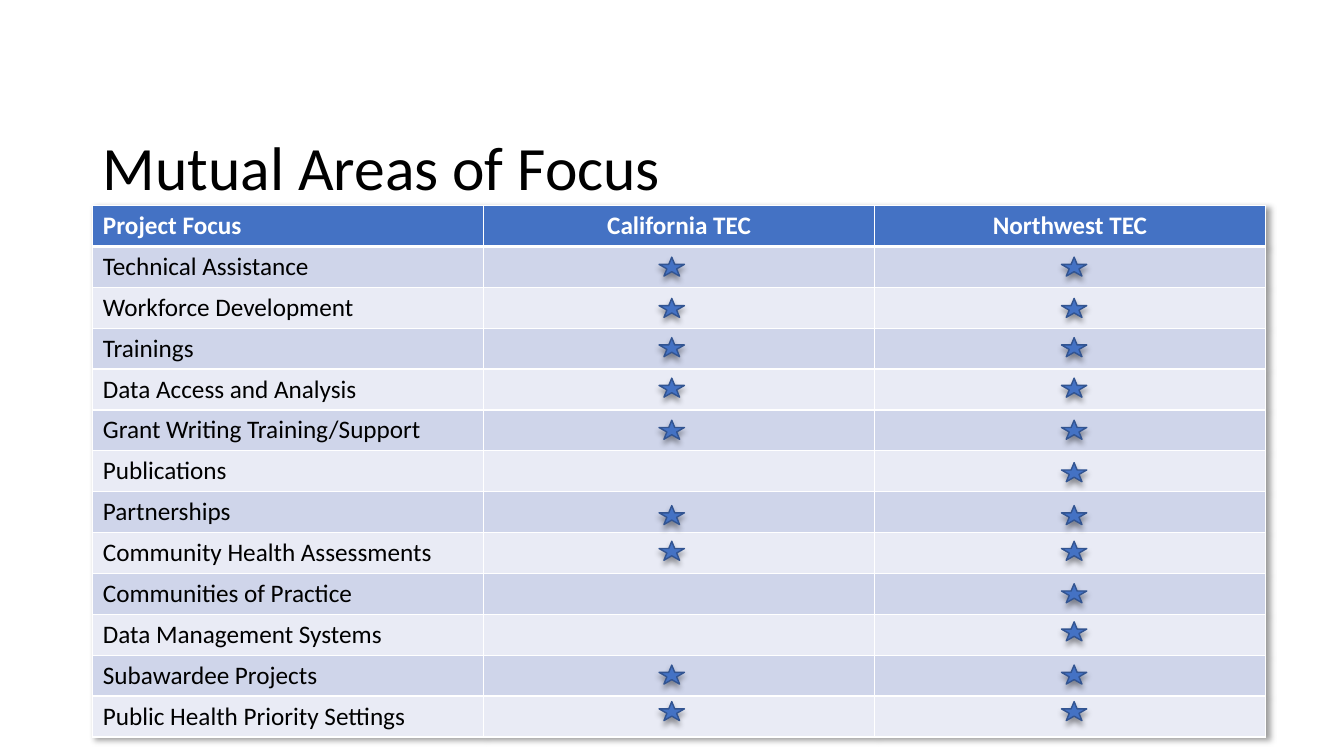
from pptx import Presentation
from pptx.dml.color import RGBColor
from pptx.enum.shapes import MSO_SHAPE
from pptx.enum.text import MSO_ANCHOR, PP_ALIGN
from pptx.oxml import parse_xml
from pptx.oxml.ns import nsdecls, qn
from pptx.util import Cm, Pt

THEME = {
    "font": "Calibri",
    "title_size": Pt(44),
    "table_size": Pt(18),
    "text": RGBColor.from_string("000000"),
    "white": RGBColor.from_string("FFFFFF"),
    "accent": RGBColor.from_string("4472C4"),
    "star_line": RGBColor.from_string("325491"),
    "bands": [RGBColor.from_string("CFD5EA"), RGBColor.from_string("E9EBF5")],
}

HEADINGS = ["Project Focus", "California TEC", "Northwest TEC"]
STAR_LEFTS = {"California": 16.61, "Northwest": 26.75}
BOTH = ["California", "Northwest"]
NORTHWEST = ["Northwest"]
# Focus area, centres that share it, top of its stars in cm
FOCUS_AREAS = [
    ("Technical Assistance", BOTH, 6.48),
    ("Workforce Development", BOTH, 7.52),
    ("Trainings", BOTH, 8.51),
    ("Data Access and Analysis", BOTH, 9.53),
    ("Grant Writing Training/Support", BOTH, 10.59),
    ("Publications", NORTHWEST, 11.66),
    ("Partnerships", BOTH, 12.74),
    ("Community Health Assessments", BOTH, 13.64),
    ("Communities of Practice", NORTHWEST, 14.71),
    ("Data Management Systems", NORTHWEST, 15.67),
    ("Subawardee Projects", BOTH, 16.76),
    ("Public Health Priority Settings", BOTH, 17.68),
]


def write(frame, text, **font_format):
    para = frame.paragraphs[0]
    span = para.add_run()
    span.text = text
    for name, value in {"name": THEME["font"], **font_format}.items():
        if name == "color":
            span.font.color.rgb = value
        else:
            setattr(span.font, name, value)
    return para


def outer_shadow(angle):
    """Return a soft 40 % black shadow cast at the given angle in degrees."""
    return parse_xml(
        f'<a:outerShdw {nsdecls("a")} blurRad="{Pt(4)}" dist="{Pt(3)}" '
        f'dir="{angle * 60000}" algn="ctr" rotWithShape="0">'
        '<a:srgbClr val="000000"><a:alpha val="40000"/></a:srgbClr></a:outerShdw>'
    )


deck = Presentation()
deck.slide_width, deck.slide_height = Cm(33.87), Cm(19.05)
page = deck.slides.add_slide(deck.slide_layouts[6])

# Table
rows = [HEADINGS] + [[name, "", ""] for name, _, _ in FOCUS_AREAS]
table = page.shapes.add_table(
    len(rows), len(HEADINGS), Cm(2.34), Cm(5.18), Cm(29.55), Cm(13.39)
).table
table_effects = parse_xml(f'<a:effectLst {nsdecls("a")}/>')
table_effects.append(outer_shadow(45))
table._tbl.tblPr.insert(0, table_effects)
for column in table.columns:
    column.width = Cm(9.85)

for row_index, texts in enumerate(rows):
    is_heading = row_index == 0
    table.rows[row_index].height = Cm(1.03)
    for column_index, text in enumerate(texts):
        cell = table.cell(row_index, column_index)
        widths = {
            "lnL": 1,
            "lnR": 1,
            "lnT": 3 if row_index == 1 else 1,
            "lnB": 3 if is_heading else 1,
        }
        for side, width in widths.items():
            cell._tc.get_or_add_tcPr().append(parse_xml(
                f'<a:{side} {nsdecls("a")} w="{Pt(width)}"><a:solidFill>'
                f'<a:srgbClr val="{THEME["white"]}"/></a:solidFill></a:{side}>'
            ))
        cell.fill.solid()
        cell.fill.fore_color.rgb = (
            THEME["accent"] if is_heading else THEME["bands"][(row_index - 1) % 2]
        )
        if text:
            para = write(
                cell.text_frame, text, size=THEME["table_size"], bold=is_heading,
                color=THEME["white"] if is_heading else THEME["text"],
            )
            para.alignment = PP_ALIGN.CENTER if column_index else PP_ALIGN.LEFT

# Stars
for _, centres, top in FOCUS_AREAS:
    for centre in centres:
        star = page.shapes.add_shape(
            MSO_SHAPE.STAR_5_POINT, Cm(STAR_LEFTS[centre]), Cm(top), Cm(0.64), Cm(0.48)
        )
        star.fill.solid()
        star.fill.fore_color.rgb = THEME["accent"]
        star.line.color.rgb = THEME["star_line"]
        star.line.width = Pt(1)
        star.shadow.inherit = False
        star._element.spPr.find(qn("a:effectLst")).append(outer_shadow(90))

# Title
title_box = page.shapes.add_textbox(Cm(2.34), Cm(3.23), Cm(29.21), Cm(2.13))
title_frame = title_box.text_frame
title_frame.word_wrap = True
title_frame.vertical_anchor = MSO_ANCHOR.MIDDLE
title = write(
    title_frame, "Mutual Areas of Focus", size=THEME["title_size"], color=THEME["text"]
)
title.line_spacing = 0.9

deck.save("out.pptx")
